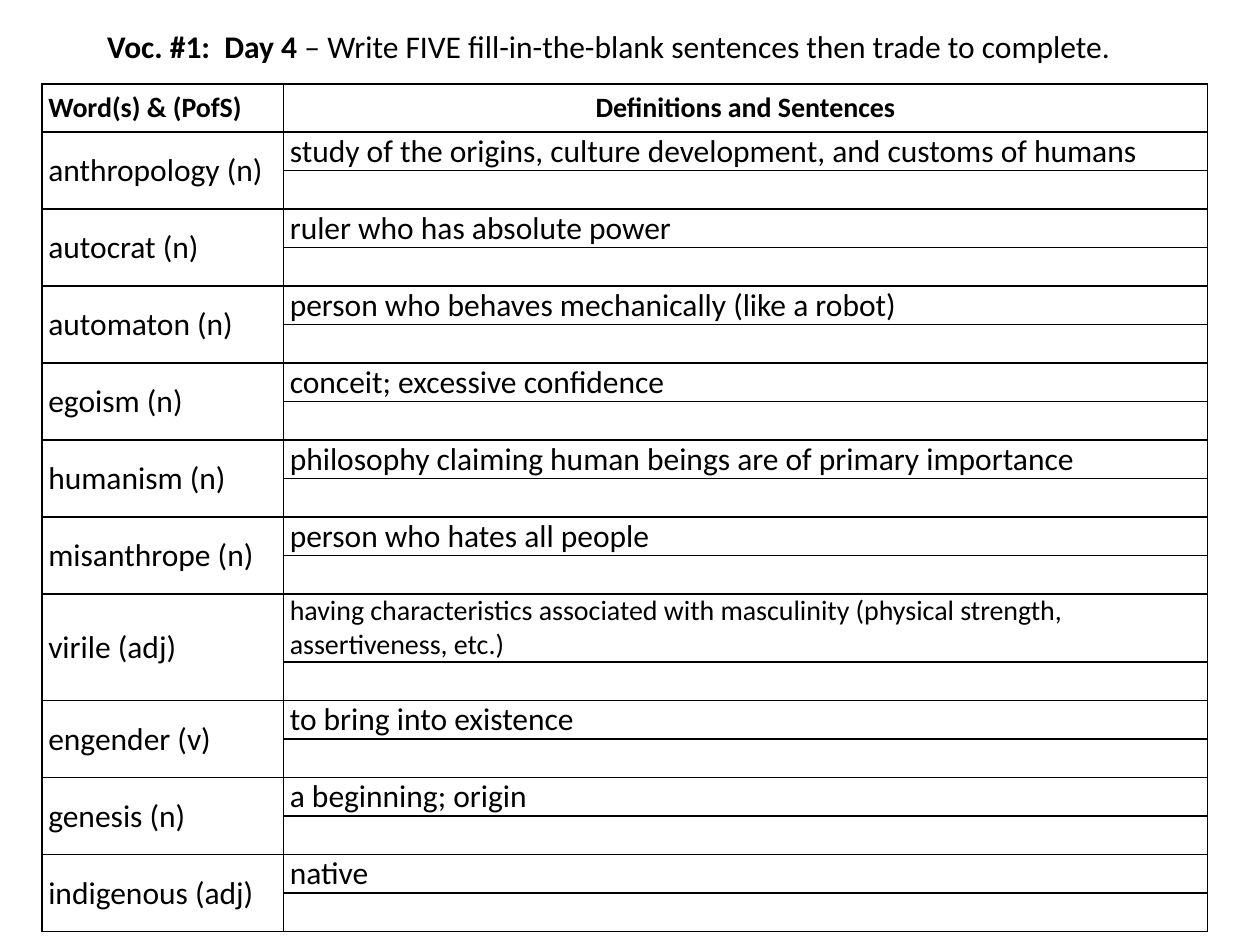
from lxml import etree
from pptx import Presentation
from pptx.dml.color import RGBColor
from pptx.enum.text import MSO_ANCHOR, MSO_AUTO_SIZE, PP_ALIGN
from pptx.oxml.ns import qn
from pptx.util import Pt

MIDDLE = MSO_ANCHOR.MIDDLE
LEFT, CENTER = PP_ALIGN.LEFT, PP_ALIGN.CENTER
FIT_SHAPE = MSO_AUTO_SIZE.SHAPE_TO_FIT_TEXT
TITLE_ONLY = 5

FONT, BLACK = "Calibri", "000000"
HEADINGS = ("Word(s) & (PofS)", "Definitions and Sentences")
COLUMN_WIDTHS = (138, 528)
HEADER_HEIGHT, LINE_HEIGHT, LONG_HEIGHT = 27.5, 22, 39

# Word, definition, definition size
VOCABULARY = [
    ("anthropology (n)", "study of the origins, culture development, and customs of humans", 18),
    ("autocrat (n)", "ruler who has absolute power", 18),
    ("automaton (n)", "person who behaves mechanically (like a robot)", 18),
    ("egoism (n)", "conceit; excessive confidence", 18),
    ("humanism (n)", "philosophy claiming human beings are of primary importance", 18),
    ("misanthrope (n)", "person who hates all people", 18),
    ("virile (adj)", "having characteristics associated with masculinity "
                     "(physical strength, assertiveness, etc.)", 16),
    ("engender (v)", "to bring into existence", 18),
    ("genesis (n)", "a beginning; origin", 18),
    ("indigenous (adj)", "native", 18),
]


def color(hex_value):
    return RGBColor.from_string(hex_value)


def add_text(paragraph, text, size=18, bold=False, align=LEFT):
    paragraph.alignment = align
    run = paragraph.add_run()
    run.text = text
    run.font.name = FONT
    run.font.size = Pt(size)
    run.font.bold = bold
    run.font.color.rgb = color(BLACK)


def add_borders(cell, width=1):
    properties = cell._tc.get_or_add_tcPr()
    for index, side in enumerate(("lnL", "lnR", "lnT", "lnB")):
        line = etree.Element(qn(f"a:{side}"), w=str(Pt(width)))
        fill = etree.SubElement(line, qn("a:solidFill"))
        etree.SubElement(fill, qn("a:srgbClr"), val=BLACK)
        properties.insert(index, line)


def format_cell(cell):
    cell.margin_left = cell.margin_right = Pt(3.6)
    cell.margin_top = cell.margin_bottom = 0
    cell.vertical_anchor = MIDDLE
    cell.fill.background()
    add_borders(cell)


def add_instruction(slide):
    title = slide.shapes.title
    title.left, title.top, title.width, title.height = Pt(18), Pt(12), Pt(636), Pt(29)
    frame = title.text_frame
    frame.word_wrap = True
    frame.auto_size = FIT_SHAPE
    frame.vertical_anchor = MIDDLE
    paragraph = frame.paragraphs[0]
    add_text(paragraph, "Voc. #1:  Day 4 ", bold=True)
    add_text(paragraph, "– Write FIVE fill-in-the-blank sentences then trade to complete.")
    paragraph._p.get_or_add_pPr().set("indent", str(Pt(36)))


def add_vocabulary_table(slide):
    # Each word has a definition line and an empty sentence line
    heights = [HEADER_HEIGHT]
    for _, _, size in VOCABULARY:
        heights += [LINE_HEIGHT if size == 18 else LONG_HEIGHT, LINE_HEIGHT]
    table = slide.shapes.add_table(len(heights), 2, Pt(24), Pt(48),
                                   Pt(sum(COLUMN_WIDTHS)), Pt(sum(heights))).table
    table.first_row = table.horz_banding = False
    for column, width in zip(table.columns, COLUMN_WIDTHS):
        column.width = Pt(width)
    for row, height in zip(table.rows, heights):
        row.height = Pt(height)
    for cell in table.iter_cells():
        format_cell(cell)

    # Header row
    for column, (heading, align) in enumerate(zip(HEADINGS, (LEFT, CENTER))):
        add_text(table.cell(0, column).text_frame.paragraphs[0], heading,
                 size=16, bold=True, align=align)

    # Words and definitions
    for index, (word, definition, size) in enumerate(VOCABULARY):
        row = 1 + 2 * index
        word_cell = table.cell(row, 0)
        word_cell.merge(table.cell(row + 1, 0))
        add_text(word_cell.text_frame.paragraphs[0], word)
        add_text(table.cell(row, 1).text_frame.paragraphs[0], definition, size=size)


def main():
    presentation = Presentation()
    presentation.slide_width, presentation.slide_height = Pt(720), Pt(540)
    slide = presentation.slides.add_slide(presentation.slide_layouts[TITLE_ONLY])
    add_vocabulary_table(slide)
    add_instruction(slide)
    presentation.save("out.pptx")


if __name__ == "__main__":
    main()
